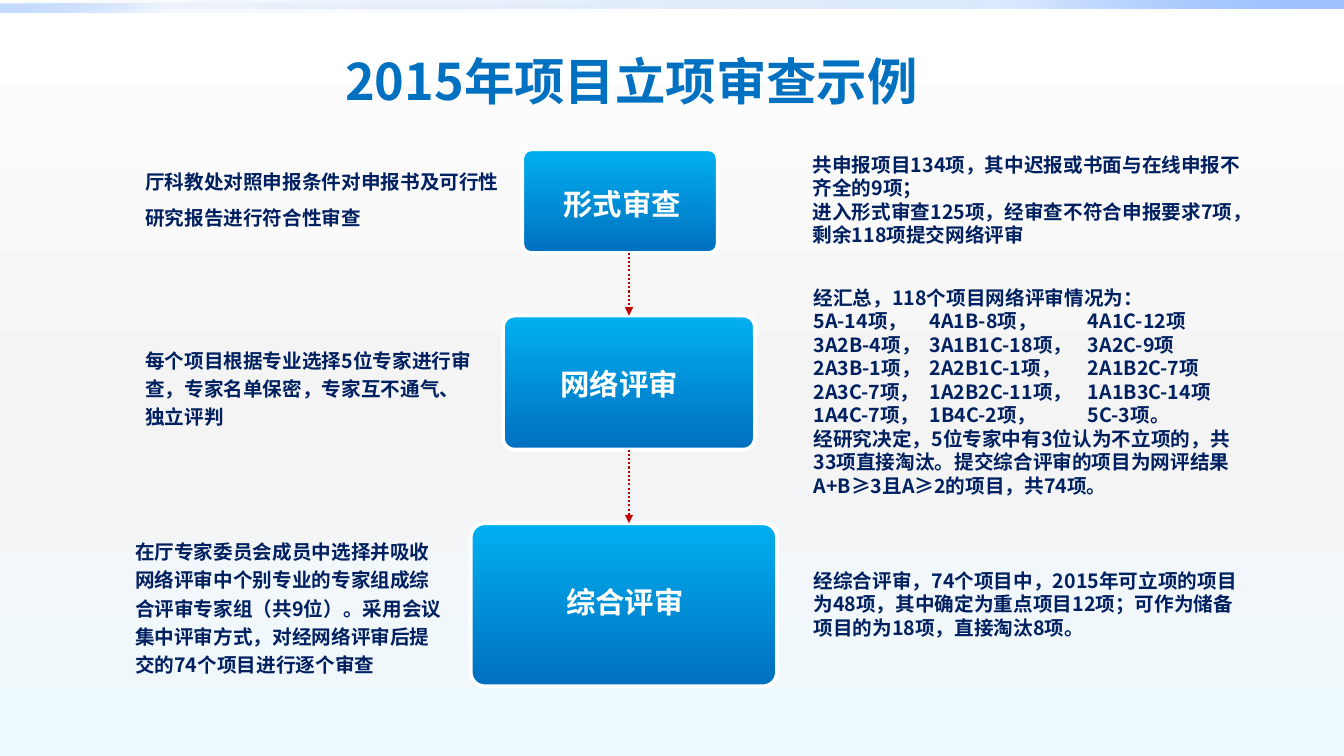
from dataclasses import dataclass

from lxml.etree import SubElement
from pptx import Presentation
from pptx.dml.color import RGBColor
from pptx.enum.dml import MSO_LINE_DASH_STYLE as Dash
from pptx.enum.shapes import MSO_CONNECTOR as Connector, MSO_SHAPE as Shape
from pptx.enum.text import MSO_ANCHOR as Anchor, MSO_AUTO_SIZE as AutoSize, PP_ALIGN as Align
from pptx.oxml.ns import qn
from pptx.util import Pt


@dataclass(frozen=True)
class Theme:
    font: str = "Noto Sans CJK SC"
    title_size: float = 36
    label_size: float = 21
    body_size: float = 14
    title: str = "0070C0"
    label: str = "FFFFFF"
    body: str = "002060"
    border: str = "FFFFFF"
    arrow: str = "C00000"
    # Gradient stops: position %, colour, opacity %
    backdrop: tuple = ((0, "FFFFFF", 100), (55, "F4F4F4", 100), (100, "EEF9FF", 100))
    stage: tuple = ((0, "00B0F0", 100), (99, "0070C0", 100), (100, "0070C0", 100))
    top_bar: tuple = ((0, "0058B7", 0), (75, "4F95FF", 20), (100, "9EC2FF", 100))
    left_bar: tuple = ((0, "0058B7", 0), (75, "4F95FF", 5), (100, "9EC2FF", 60))


def write_text(frame, text, *, size, color, font, align=Align.LEFT, spacing=1.0,
               tabs=(), anchor=Anchor.TOP, auto_size=AutoSize.SHAPE_TO_FIT_TEXT):
    """Fill a text frame, one paragraph for each line of text."""
    frame.word_wrap = True
    frame.auto_size = auto_size
    frame.vertical_anchor = anchor
    frame.margin_left = frame.margin_right = Pt(9.4)
    frame.margin_top = frame.margin_bottom = Pt(4.5)
    for index, line in enumerate(text.split("\n")):
        paragraph = frame.add_paragraph() if index else frame.paragraphs[0]
        if "\t" in line:
            tab_list = SubElement(paragraph._p.get_or_add_pPr(), qn("a:tabLst"))
            for stop in tabs:
                SubElement(tab_list, qn("a:tab"), pos=str(Pt(stop)), algn="l")
        paragraph.alignment = align
        paragraph.line_spacing = spacing
        run = paragraph.add_run()
        run.text = line
        run.font.size = Pt(size)
        run.font.bold = True
        run.font.name = font
        run.font.color.rgb = RGBColor.from_string(color)
        SubElement(run._r.get_or_add_rPr(), qn("a:ea"), typeface=font)


def fill_gradient(fill, element, stops, angle):
    """Apply a linear gradient; angle runs clockwise in degrees."""
    fill.gradient()
    fill.gradient_angle = (360 - angle) % 360
    stop_list = next(element.iter(qn("a:gsLst")))
    for old_stop in list(stop_list):
        stop_list.remove(old_stop)
    for position, color, opacity in stops:
        stop = SubElement(stop_list, qn("a:gs"), pos=str(position * 1000))
        rgb = SubElement(stop, qn("a:srgbClr"), val=color)
        if opacity < 100:
            SubElement(rgb, qn("a:alpha"), val=str(opacity * 1000))


class SlideBuilder:
    def __init__(self, slide, theme):
        self.slide = slide
        self.theme = theme

    def backdrop(self):
        fill_gradient(self.slide.background.fill, self.slide._element, self.theme.backdrop, 90)

    def title(self, text, *box):
        title = self.slide.shapes.title
        title.left, title.top, title.width, title.height = map(Pt, box)
        write_text(title.text_frame, text, size=self.theme.title_size, color=self.theme.title,
                   font=self.theme.font, align=Align.CENTER, anchor=Anchor.MIDDLE,
                   auto_size=AutoSize.NONE)

    def block(self, kind, box, stops, angle):
        block = self.slide.shapes.add_shape(kind, *map(Pt, box))
        block.shadow.inherit = False
        fill_gradient(block.fill, block._element, stops, angle)
        block.line.fill.background()
        return block

    def stage(self, *box):
        stage = self.block(Shape.ROUNDED_RECTANGLE, box, self.theme.stage, 90)
        stage.adjustments[0] = 0.087
        stage.line.color.rgb = RGBColor.from_string(self.theme.border)
        stage.line.width = Pt(2.75)
        return stage

    def text(self, text, box, **style):
        frame = self.slide.shapes.add_textbox(*map(Pt, box)).text_frame
        defaults = {"size": self.theme.body_size, "color": self.theme.body,
                    "font": self.theme.font}
        write_text(frame, text, **{**defaults, **style})

    def label(self, text, box, **style):
        self.text(text, box, size=self.theme.label_size, color=self.theme.label, **style)

    def arrow(self, x, top, bottom):
        arrow = self.slide.shapes.add_connector(Connector.STRAIGHT, x, Pt(top), x, Pt(bottom))
        arrow.line.color.rgb = RGBColor.from_string(self.theme.arrow)
        arrow.line.width = Pt(1.5)
        arrow.line.dash_style = Dash.ROUND_DOT
        SubElement(arrow.line._get_or_add_ln(), qn("a:tailEnd"), type="triangle")
        SubElement(arrow._element.spPr, qn("a:effectLst"))
        return arrow


NETWORK_RESULT = """经汇总，118个项目网络评审情况为：
5A-14项，\t4A1B-8项，\t4A1C-12项
3A2B-4项，\t3A1B1C-18项，\t3A2C-9项
2A3B-1项，\t2A2B1C-1项，\t2A1B2C-7项
2A3C-7项，\t1A2B2C-11项，\t1A1B3C-14项
1A4C-7项，\t1B4C-2项，\t5C-3项。
经研究决定，5位专家中有3位认为不立项的，共33项直接淘汰。提交综合评审的项目为网评结果A+B≥3且A≥2的项目，共74项。"""


def main():
    deck = Presentation()
    deck.slide_width, deck.slide_height = Pt(960), Pt(540)
    page = SlideBuilder(deck.slides.add_slide(deck.slide_layouts[5]), Theme())

    # Background and top bars
    page.backdrop()
    page.block(Shape.RECTANGLE, (0, 0, 960, 5.8), page.theme.top_bar, 315)
    page.block(Shape.RECTANGLE, (0, 2.9, 480, 5.8), page.theme.left_bar, 135)

    page.title("2015年项目立项审查示例", 206.6, 25.2, 488.9, 64.8)

    # Review stages, growing downwards
    page.stage(373, 106.6, 139.7, 74.2)
    network = page.stage(359.3, 225.4, 180, 95.8)
    page.stage(336.2, 373.7, 218.9, 116.6)

    # Arrows between the stages
    flow_x = network.left + network.width // 2
    page.arrow(flow_x, 180.4, 225.4).end_connect(network, 0)
    page.arrow(flow_x, 321.2, 373.7).begin_connect(network, 2)

    # Stage names
    page.label("形式审查", (393.1, 128.2, 105.8, 34.6))
    page.label("网络评审", (391, 257, 116.6, 34.6))
    page.label("综合评审", (354.2, 407.5, 184.3, 39.6), align=Align.CENTER, spacing=1.2)

    # How each stage works
    page.text("厅科教处对照申报条件对申报书及可行性研究报告进行符合性审查",
              (94.3, 108.7, 277.9, 60.5), spacing=1.5)
    page.text("每个项目根据专业选择5位专家进行审查，专家名单保密，专家互不通气、独立评判",
              (94.3, 241.2, 256.3, 70.6), spacing=1.2)
    page.text("在厅专家委员会成员中选择并吸收网络评审中个别专业的专家组成综合评审专家组（共9位）。"
              "采用会议集中评审方式，对经网络评审后提交的74个项目进行逐个审查",
              (87.1, 378, 239.8, 110.9), spacing=1.2)

    # Outcome of each stage
    page.text("共申报项目134项，其中迟报或书面与在线申报不齐全的9项；\n"
              "进入形式审查125项，经审查不符合申报要求7项，剩余118项提交网络评审",
              (571, 104.4, 324.7, 77))
    page.text(NETWORK_RESULT, (571.7, 199.4, 324.7, 162), tabs=(83, 196))
    page.text("经综合评审，74个项目中，2015年可立项的项目为48项，其中确定为重点项目12项；"
              "可作为储备项目的为18项，直接淘汰8项。",
              (571.7, 401.8, 324.7, 60.5))

    deck.save("out.pptx")


if __name__ == "__main__":
    main()
